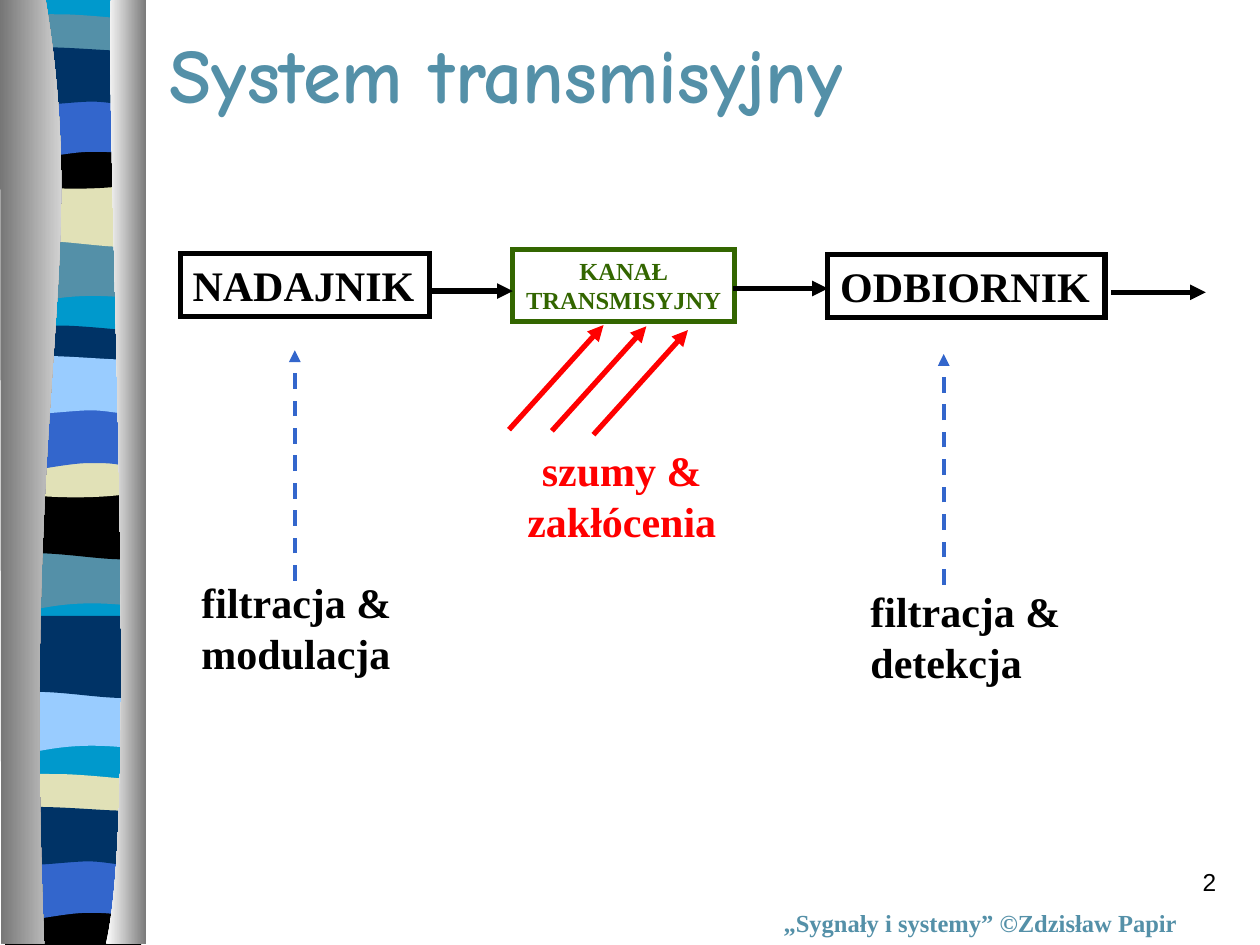
from lxml import etree
from pptx import Presentation
from pptx.dml.color import RGBColor
from pptx.enum import dml, shapes, text
from pptx.oxml.ns import qn
from pptx.util import Inches, Pt

BLACK = RGBColor(0x00, 0x00, 0x00)
WHITE = RGBColor(0xFF, 0xFF, 0xFF)
GREY = RGBColor(0x76, 0x76, 0x76)
RED = RGBColor(0xFF, 0x00, 0x00)
GREEN = RGBColor(0x33, 0x66, 0x00)
BLUE = RGBColor(0x33, 0x66, 0xCC)
SKY = RGBColor(0x99, 0xCC, 0xFF)
CYAN = RGBColor(0x00, 0x99, 0xCC)
STEEL = RGBColor(0x54, 0x90, 0xA8)
NAVY = RGBColor(0x00, 0x33, 0x66)
SAND = RGBColor(0xE1, 0xE1, 0xB7)
SERIF = "Times New Roman"
BAND_WIDTH = 1.08
BAND_STRETCH = 1.3

WAVES = {
    "sag": (.55, [(1.09, 0), (1.09, .47), (.34, .39, .19, .55, 0, .47), (0, 0), (1.09, 0)]),
    "ripple": (.55, [(1.09, 0), (1.09, .48), (.91, .55, .34, .42, 0, .48), (0, 0), (1.09, 0)]),
    "crest": (.33, [(1.09, .05), (1.09, .29), (.91, .33, .18, .33, 0, .29), (0, .05),
                    (.07, 0, .24, .01, .42, .01), (.6, .01, .95, .04, 1.09, .05)]),
    "bowl": (.38, [(1.09, 0), (1.09, .32), (.91, .38, .19, .38, 0, .32), (0, 0),
                   (.67, .05, .86, 0, 1.09, 0)]),
    "arch": (.47, [(1.08, 0), (1.08, 0, 1.08, .48, 1.08, .48), (.91, .42, .84, .42, .66, .42),
                   (.48, .42, .16, .48, 0, .48), (0, 0), (1.08, 0)]),
    "swell": (.41, [(1.08, .05), (1.08, .36), (1.01, .41, .85, .36, .67, .36),
                    (.49, .36, .11, .41, 0, .36), (0, .05),
                    (.15, 0, .74, .05, .92, .05), (1.1, .05, 1.05, .05, 1.08, .05)]),
    "base": (.38, [(1.08, 0), (1.08, .37), (0, .37), (0, 0), (.67, .05, .86, 0, 1.08, 0)]),
}
BANDS = [
    ("sag", .05, 1.85, STEEL), ("ripple", .06, 1.39, SAND),
    ("crest", .06, .15, STEEL), ("bowl", .05, 1.08, BLACK),
    ("arch", .06, .73, BLUE), ("swell", .06, .4, NAVY),
    ("sag", .04, 4.29, STEEL), ("ripple", .05, 3.87, BLACK),
    ("crest", .05, 2.62, NAVY), ("bowl", .05, 3.53, SAND),
    ("arch", .05, 3.2, BLUE), ("swell", .05, 2.85, SKY),
    ("sag", .04, 5.42, SKY), ("ripple", .05, 4.97, NAVY),
    ("crest", .04, 6.18, SAND), ("base", .04, 7.12, BLACK),
    ("arch", .03, 6.77, BLUE), ("swell", .03, 6.43, NAVY),
]
BACKING = [(1.08, 0), (1.08, 7.48), (0, 7.48), (0, 0), (1.08, 0)]
LEFT_EDGE = [(.36, 0), (.72, 2.17, .17, 2.97, .35, 7.5), (.01, 7.5), (0, 0), (.36, 0)]
RIGHT_EDGE = [(.04, 0), (0, 1.26, .27, 6.47, 0, 7.5), (.32, 7.5), (.32, .01), (.04, 0)]


def add_outline(s, box, segments, colors, stretch=1):
    x, y, w, h = map(Inches, box)
    fb = s.shapes.build_freeform(x, y)
    fb.add_line_segments([(x + w, y), (x + w, y + h), (x, y + h)])
    sp = fb.convert_to_shape()
    outline = sp._element.spPr.find(".//" + qn("a:path"))
    for child in list(outline):
        outline.remove(child)
    for i, seg in enumerate(segments):
        tag = "a:moveTo" if i == 0 else "a:lnTo" if len(seg) == 2 else "a:cubicBezTo"
        step = etree.SubElement(outline, qn(tag))
        for px, py in zip(seg[::2], seg[1::2]):
            py = box[3] / 2 + (py - box[3] / 2) * stretch
            etree.SubElement(step, qn("a:pt"), x=str(Inches(px)), y=str(Inches(py)))
    etree.SubElement(outline, qn("a:close"))
    sp.shadow.inherit = False
    sp.line.fill.background()
    if len(colors) == 1:
        sp.fill.solid()
        sp.fill.fore_color.rgb = colors[0]
    else:
        sp.fill.gradient()
        sp.fill.gradient_angle = 0
        for stop, color, position in zip(sp.fill.gradient_stops, colors, (0, 1)):
            stop.color.rgb = color
            stop.position = position


def write(sp, words, size, color, font=SERIF, bold=True, align=text.PP_ALIGN.LEFT, wrap=False):
    tf = sp.text_frame
    tf.word_wrap = wrap
    tf.vertical_anchor = text.MSO_ANCHOR.TOP
    if not wrap:
        tf.auto_size = text.MSO_AUTO_SIZE.SHAPE_TO_FIT_TEXT
    p = tf.paragraphs[0]
    p.text = words
    p.alignment = align
    p.font.size = Pt(size)
    p.font.name = font
    p.font.bold = bold
    p.font.color.rgb = color


def add_label(s, box, words, size, color, **style):
    write(s.shapes.add_textbox(*map(Inches, box)), words, size, color, **style)


def add_block(s, box, words, size, color, **style):
    sp = s.shapes.add_shape(shapes.MSO_SHAPE.RECTANGLE, *map(Inches, box))
    sp.shadow.inherit = False
    sp.fill.background()
    sp.line.color.rgb = color
    sp.line.width = Pt(3)
    etree.SubElement(sp.line._get_or_add_ln(), qn("a:miter"), lim="800000")
    write(sp, words, size, color, **style)


def add_arrow(s, x1, y1, x2, y2, color, width=3, dashed=False):
    cx = s.shapes.add_connector(shapes.MSO_CONNECTOR.STRAIGHT,
                                *map(Inches, (x1, y1, x2, y2)))
    cx.line.color.rgb = color
    cx.line.width = Pt(width)
    if dashed:
        cx.line.dash_style = dml.MSO_LINE.DASH
    etree.SubElement(cx.line._get_or_add_ln(), qn("a:tailEnd"), type="triangle")
    etree.SubElement(cx._element.spPr, qn("a:effectLst"))


def add_ribbon(s):
    add_outline(s, (.06, -.01, BAND_WIDTH, 7.48), BACKING, [CYAN])
    for wave, x, y, color in BANDS:
        height, segments = WAVES[wave]
        add_outline(s, (x, y, BAND_WIDTH, height), segments, [color], BAND_STRETCH)
    add_outline(s, (0, -.01, .72, 7.5), LEFT_EDGE, [GREY, WHITE])
    add_outline(s, (.84, -.01, .33, 7.5), RIGHT_EDGE, [WHITE, GREY])


def main():
    prs = Presentation()
    prs.slide_width, prs.slide_height = Inches(10), Inches(7.5)
    s = prs.slides.add_slide(prs.slide_layouts[6])
    center = text.PP_ALIGN.CENTER

    add_ribbon(s)
    add_label(s, (1.25, .16, 6.41, .84), "System transmisyjny", 44, STEEL, font="Comic Neue")
    add_label(s, (6.12, 7.16, 3.41, .34), "„Sygnały i systemy” ©Zdzisław Papir", 14, STEEL)

    add_block(s, (1.43, 2.01, 1.98, .5), "NADAJNIK", 24, BLACK)
    add_block(s, (6.57, 2.02, 2.2, .5), "ODBIORNIK", 24, BLACK)
    add_block(s, (4.07, 1.98, 1.76, .57), "KANAŁ\nTRANSMISYJNY", 14, GREEN, align=center)

    for x1, x2, y in ((3.41, 4.07, 2.31), (5.82, 6.57, 2.29)):
        add_arrow(s, x1, y, x2, y, BLACK)
    for x, y in ((4.04, 3.41), (4.38, 3.42), (4.71, 3.45)):
        add_arrow(s, x, y, x + .75, y - .83, RED)
    add_label(s, (4.08, 3.48, 1.71, .91), "szumy &\nzakłócenia", 24, RED, align=center)

    for x, y in ((2.34, 4.61), (7.49, 4.64)):
        add_arrow(s, x, y, x, y - 1.83, BLUE, 2.25, dashed=True)
    add_label(s, (1.5, 4.53, 1.72, .91), "filtracja &\nmodulacja", 24, BLACK)
    add_label(s, (6.81, 4.6, 1.72, .91), "filtracja &\ndetekcja", 24, BLACK)
    add_arrow(s, 8.82, 2.32, 9.57, 2.32, BLACK)
    add_label(s, (7.67, 6.83, 2.08, .5), "2", 14, BLACK, font="Arial", bold=False,
              align=text.PP_ALIGN.RIGHT, wrap=True)
    prs.save("out.pptx")


if __name__ == "__main__":
    main()
